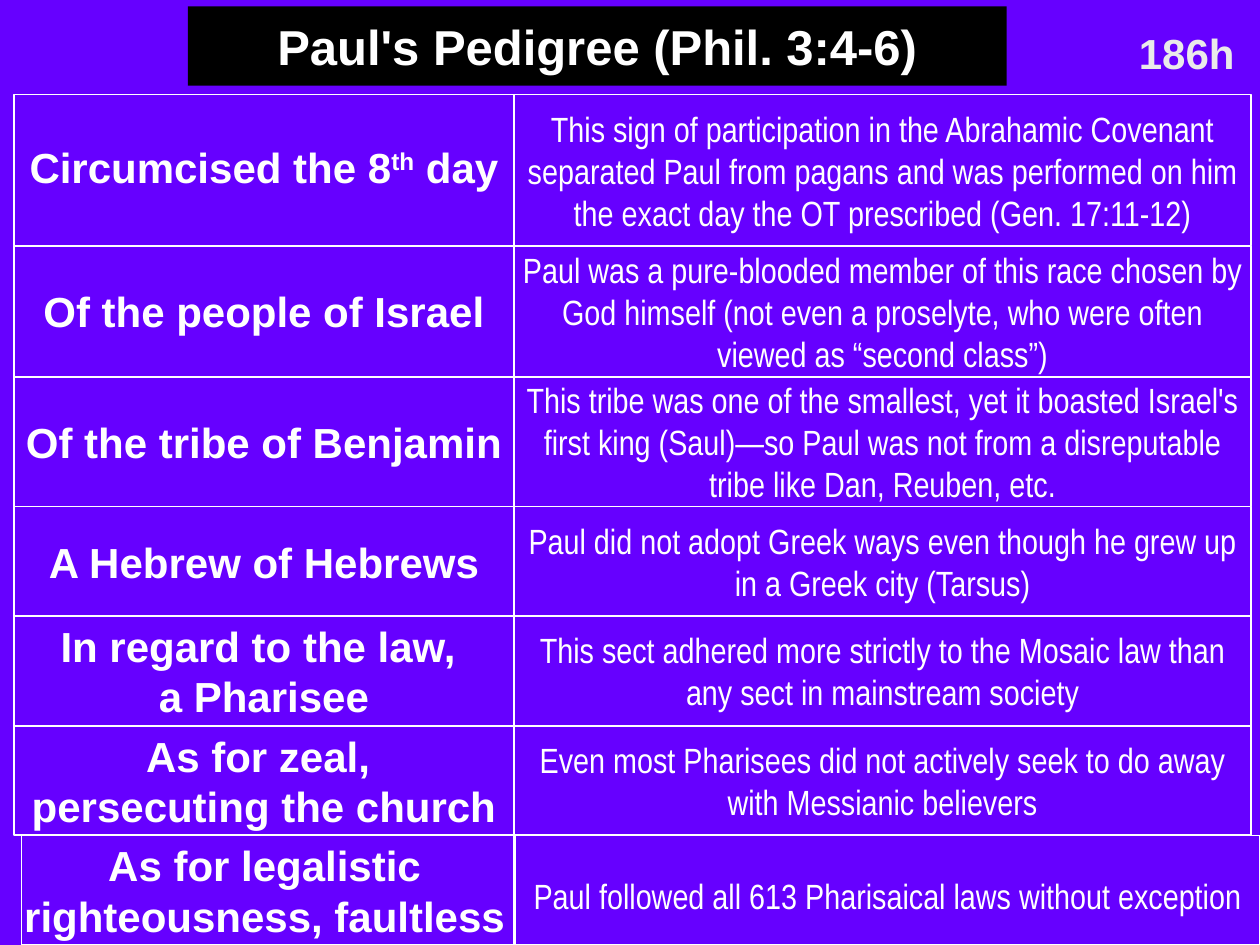
"""Build a slide listing Paul's pedigree from Philippians 3:4-6."""
from dataclasses import dataclass

from lxml import etree
from pptx import Presentation
from pptx.dml.color import RGBColor
from pptx.enum import shapes, text
from pptx.oxml import ns
from pptx.util import Inches, Pt


@dataclass(frozen=True)
class Theme:
    back: RGBColor = RGBColor(0x66, 0x00, 0xFF)
    banner: RGBColor = RGBColor(0x00, 0x00, 0x00)
    ink: RGBColor = RGBColor(0xFF, 0xFF, 0xFF)
    number: RGBColor = RGBColor(0xEA, 0xEA, 0xEA)
    head: str = "Arial"
    body: str = "Arial Narrow"
    title_size: int = 28
    label_size: int = 24
    body_size: int = 20


theme = Theme()


def style(p, size, name, bold, color=theme.ink):
    for r in p.runs:
        r.font.size = Pt(size)
        r.font.name = name
        r.font.bold = bold
        r.font.color.rgb = color


def cell(at, parts=(), is_label=False, line=None):
    at = [Inches(v) for v in at]
    if line is None:
        sp = s.shapes.add_textbox(*at)
    else:
        sp = s.shapes.add_shape(shapes.MSO_SHAPE.RECTANGLE, *at)
        sp.shadow.inherit = False
        sp.fill.background()
        sp.line.color.rgb = theme.ink
        sp.line.width = Pt(line)
    tf = sp.text_frame
    tf.word_wrap = True
    tf.vertical_anchor = text.MSO_ANCHOR.MIDDLE
    tf.margin_left = tf.margin_right = tf.margin_top = tf.margin_bottom = 0
    p = tf.paragraphs[0]
    p.alignment = text.PP_ALIGN.CENTER
    if len(parts) == 1:
        p.text = parts[0]
    else:
        for part in parts:
            p.add_run().text = part
    if is_label:
        style(p, theme.label_size, theme.head, True)
    else:
        style(p, theme.body_size, theme.body, False)
    return p


prs = Presentation()
prs.slide_width, prs.slide_height = Inches(10), Inches(7.5)
s = prs.slides.add_slide(prs.slide_layouts[5])
s.background.fill.solid()
s.background.fill.fore_color.rgb = theme.back

sp = s.shapes.title
sp.left, sp.top, sp.width, sp.height = [Inches(v) for v in (1.49, 0.05, 6.5, 0.63)]
sp.fill.solid()
sp.fill.fore_color.rgb = theme.banner
tf = sp.text_frame
tf.text = "Paul's Pedigree (Phil. 3:4-6)"
tf.vertical_anchor = text.MSO_ANCHOR.MIDDLE
tf.paragraphs[0].alignment = text.PP_ALIGN.CENTER
style(tf.paragraphs[0], theme.title_size, theme.head, True)

sp = s.shapes.add_textbox(Inches(8.94), Inches(0.17), Inches(0.99), Inches(0.5))
tf = sp.text_frame
tf.text = "186h"
tf.word_wrap = False
tf.auto_size = text.MSO_AUTO_SIZE.SHAPE_TO_FIT_TEXT
p = tf.paragraphs[0]
style(p, theme.label_size, theme.head, True, theme.number)
fill = p.runs[0]._r.get_or_add_rPr().find(ns.qn("a:solidFill"))
effects = etree.Element(ns.qn("a:effectLst"))
shadow = etree.SubElement(effects, ns.qn("a:outerShdw"), blurRad="38100", dist="38100", dir="2700000")
etree.SubElement(shadow, ns.qn("a:srgbClr"), val="000000")
fill.addnext(effects)

label_x, label_w = 0.11, 3.97
note_x, note_w = 4.08, 5.85
rows = [
    (1.2, "", "This sign of participation in the Abrahamic Covenant separated Paul from pagans "
     "and was performed on him the exact day the OT prescribed (Gen. 17:11-12)"),
    (1.04, "Of the people of Israel", "Paul was a pure-blooded member of this race chosen by God himself "
     "(not even a proselyte, who were often viewed as “second class”)"),
    (1.03, "Of the tribe of Benjamin", "This tribe was one of the smallest, yet it boasted Israel's first king "
     "(Saul)—so Paul was not from a disreputable tribe like Dan, Reuben, etc."),
    (0.87, "A Hebrew of Hebrews",
     "Paul did not adopt Greek ways even though he grew up in a Greek city (Tarsus)"),
    (0.87, "In regard to the law, \va Pharisee",
     "This sect adhered more strictly to the Mosaic law than any sect in mainstream society"),
    (0.87, "As for zeal, \vpersecuting the church",
     "Even most Pharisees did not actively seek to do away with Messianic believers"),
]
y = 0.75
for h, label, note in rows:
    cell((label_x, y, label_w, h), [label] if label else [], is_label=True, line=1)
    cell((note_x, y, note_w, h), [note], line=1)
    y += h

last_h = 0.87
cell((0.17, y, 3.92, last_h), line=0)
cell((note_x, y, 5.92, last_h), line=0)
cell((label_x, y, 3.98, last_h), ["As for legalistic righteousness, faultless"], is_label=True)
cell((4.19, 6.67, 5.71, last_h), ["Paul followed all 613 Pharisaical laws without exception"])

p = cell((label_x, 0.8, label_w, 1.04), ["Circumcised the 8", "th", " day"], is_label=True)
p.runs[1]._r.get_or_add_rPr().set("baseline", "30000")

prs.save("out.pptx")
